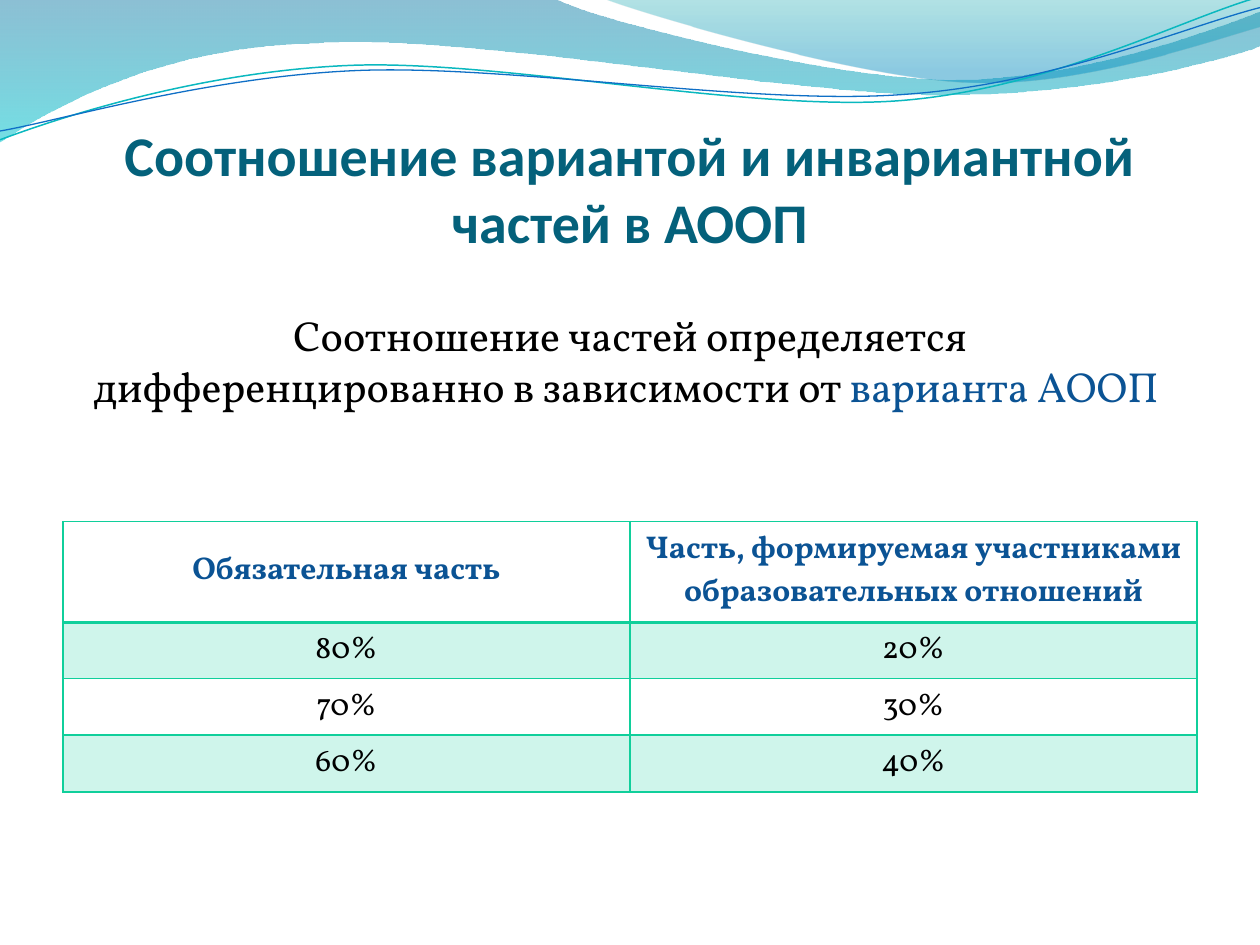
from math import cos, radians, sin

from lxml.etree import SubElement
from pptx import Presentation
from pptx.dml.color import RGBColor
from pptx.enum.text import MSO_ANCHOR, MSO_AUTO_SIZE, PP_ALIGN
from pptx.oxml import parse_xml
from pptx.oxml.ns import nsdecls, qn
from pptx.util import Inches, Pt

COLORS = {
    "title": "04617B", "text": "000000", "accent": "0B5394", "table": "10CF9B",
    "teal_line": "0AB8BF", "blue_line": "0F6FC6",
    "deep_blue": "0074A1", "turquoise": "00C6CF",
    "sea_green": "00A1A9", "sky_blue": "008BBF",
}
BODY_FONT = "Vollkorn"
CURVE_ROTATION = 357.3

# Each outline is a start point and segments: two numbers make a line, six a Bézier curve.
WIDE_WAVE = [(0, 0), (4.4, -0.01), (4.76, 0.17, 6.64, 0.63, 7.58, 0.63),
             (8.53, 0.63, 9.58, 0.26, 10, 0.09), (10.01, 0.36),
             (9.83, 0.44, 8.7, 0.76, 7.46, 0.75), (6.22, 0.75, 3.82, 0.28, 2.57, 0.34),
             (1.29, 0.36, 0.46, 0.83, -0.01, 1.13), (0, 0)]
RIGHT_WAVE = [(4.79, -0.01), (5.09, 0.11, 6.82, 0.62, 7.69, 0.65),
              (8.56, 0.69, 9.61, 0.32, 10, 0.21), (10, 0), (4.79, -0.01)]
TEAL_CURVE = [(0, 1.11), (0.48, 0.93, 1.58, 0.57, 2.77, 0.52),
              (3.95, 0.47, 5.93, 0.89, 7.13, 0.8), (8.33, 0.71, 9.38, 0.15, 9.98, -0.02)]
BLUE_CURVE = [(0, 1.04), (0.47, 0.96, 1.64, 0.61, 2.83, 0.56),
              (4.03, 0.51, 5.97, 0.84, 7.17, 0.75), (8.36, 0.67, 9.41, 0.21, 10, 0.06)]


def rgb(name):
    return RGBColor.from_string(COLORS[name])


def set_alpha(color_element, percent):
    SubElement(color_element, qn("a:alpha")).set("val", str(percent * 1000))


def add_outline(slide, box, outline, close, rotation=0):
    """Add a curved freeform whose points are in slide inches, as seen after rotation."""
    left, top, width, height = box
    middle_x, middle_y = left + width / 2, top + height / 2
    cosine, sine = cos(radians(-rotation)), sin(radians(-rotation))

    def local_point(x, y):
        x, y = x - middle_x, y - middle_y
        return (Inches(x * cosine - y * sine + width / 2),
                Inches(x * sine + y * cosine + height / 2))

    builder = slide.shapes.build_freeform(0, 0)
    builder.add_line_segments([(Inches(width), Inches(height))], close=close)
    shape = builder.convert_to_shape()
    shape.left, shape.top, shape.width, shape.height = (Inches(value) for value in box)
    shape.rotation = rotation
    shape.shadow.inherit = False

    route = next(shape._element.iter(qn("a:path")))
    for command in list(route):
        route.remove(command)
    for index, segment in enumerate(outline):
        tag = "a:moveTo" if index == 0 else "a:lnTo" if len(segment) == 2 else "a:cubicBezTo"
        command = SubElement(route, qn(tag))
        for x, y in zip(segment[::2], segment[1::2]):
            point = SubElement(command, qn("a:pt"))
            for axis, value in zip("xy", local_point(x, y)):
                point.set(axis, str(value))
    if close:
        SubElement(route, qn("a:close"))
    return shape


def add_wave(slide, box, outline, stops):
    """Add a filled wave; stops are (position, colour, opacity percent)."""
    shape = add_outline(slide, box, outline, True)
    shape.line.fill.background()
    shape.fill.gradient()
    shape.fill.gradient_angle = 270
    for gradient_stop, (position, color, opacity) in zip(shape.fill.gradient_stops, stops):
        gradient_stop.position = position
        gradient_stop.color.rgb = rgb(color)
    color_elements = list(shape._element.spPr.iter(qn("a:srgbClr")))
    for element, (position, color, opacity) in zip(color_elements, stops):
        set_alpha(element, opacity)


def add_curve(slide, box, outline, color, width):
    curve = add_outline(slide, box, outline, False, CURVE_ROTATION)
    curve.fill.background()
    curve.line.color.rgb = rgb(color)
    curve.line.width = Pt(width)


def add_header_waves(slide):
    add_wave(slide, (-0.01, -0.01, 10.02, 1.14), WIDE_WAVE,
             [(0, "deep_blue", 45), (1, "turquoise", 55)])
    add_wave(slide, (4.79, -0.01, 5.21, 0.7), RIGHT_WAVE,
             [(0, "sea_green", 30), (0.8, "sky_blue", 45)])
    add_curve(slide, (-0.02, 0.22, 10.02, 0.71), TEAL_CURVE, "teal_line", 0.85)
    add_curve(slide, (-0.02, 0.3, 10.03, 0.58), BLUE_CURVE, "blue_line", 0.75)


def format_paragraph(paragraph, font_name, size, color, bold=False):
    paragraph.alignment = PP_ALIGN.CENTER
    font = paragraph.font
    font.name, font.size, font.bold = font_name, Pt(size), bold
    font.color.rgb = rgb(color)


def place_title(slide, left, top, width, height):
    title = slide.shapes.title
    title.left, title.top, title.width, title.height = left, top, width, height
    frame = title.text_frame
    frame.text = "Соотношение вариантой и инвариантной частей в АООП"
    frame.auto_size = MSO_AUTO_SIZE.NONE
    frame.vertical_anchor = MSO_ANCHOR.BOTTOM
    frame.margin_left = frame.margin_right = frame.margin_bottom = 0
    frame.margin_top = Inches(0.05)
    format_paragraph(frame.paragraphs[0], "Calibri", 32, "title", True)
    slide.shapes._spTree.append(title._element)


def add_statement(slide, left, top, width, height):
    frame = slide.shapes.add_textbox(left, top, width, height).text_frame
    frame.word_wrap = True
    frame.auto_size = MSO_AUTO_SIZE.SHAPE_TO_FIT_TEXT
    paragraph = frame.paragraphs[0]
    format_paragraph(paragraph, BODY_FONT, 24, "text")
    paragraph.add_run().text = "Соотношение частей определяется дифференцированно в зависимости от "
    variant = paragraph.add_run()
    variant.text = "варианта АООП "
    variant.font.color.rgb = rgb("accent")


def set_borders(cell, bottom_width):
    properties = cell._tc.get_or_add_tcPr()
    widths = {"lnL": 1, "lnR": 1, "lnT": 1, "lnB": bottom_width}
    for index, (side, width) in enumerate(widths.items()):
        properties.insert(index, parse_xml(
            f'<a:{side} {nsdecls("a")} w="{Pt(width)}"><a:solidFill>'
            f'<a:srgbClr val="{COLORS["table"]}"/></a:solidFill></a:{side}>'))


def add_shares_table(slide, left, top, width, height):
    rows = [("Обязательная часть", "Часть, формируемая участниками образовательных отношений"),
            ("80%", "20%"), ("70%", "30%"), ("60%", "40%")]
    table = slide.shapes.add_table(len(rows), 2, left, top, width, height).table
    for row_index, texts in enumerate(rows):
        header = row_index == 0
        for column_index, text in enumerate(texts):
            cell = table.cell(row_index, column_index)
            cell.text = text
            cell.vertical_anchor = MSO_ANCHOR.MIDDLE
            format_paragraph(cell.text_frame.paragraphs[0], BODY_FONT, 18,
                             "accent" if header else "text", header)
            if row_index % 2:
                cell.fill.solid()
                cell.fill.fore_color.rgb = rgb("table")
                set_alpha(next(cell._tc.tcPr.iter(qn("a:srgbClr"))), 20)
            else:
                cell.fill.background()
            set_borders(cell, 2 if header else 1)


def main():
    presentation = Presentation()
    presentation.slide_width, presentation.slide_height = Inches(10), Inches(7.5)
    slide = presentation.slides.add_slide(presentation.slide_layouts[5])
    add_header_waves(slide)
    place_title(slide, Inches(0.5), Inches(0.77), Inches(9), Inches(1.25))
    add_shares_table(slide, Inches(0.5), Inches(4.14), Inches(9), Inches(1.64))
    add_statement(slide, Inches(0.59), Inches(2.41), Inches(8.82), Inches(0.91))
    presentation.save("out.pptx")


if __name__ == "__main__":
    main()
